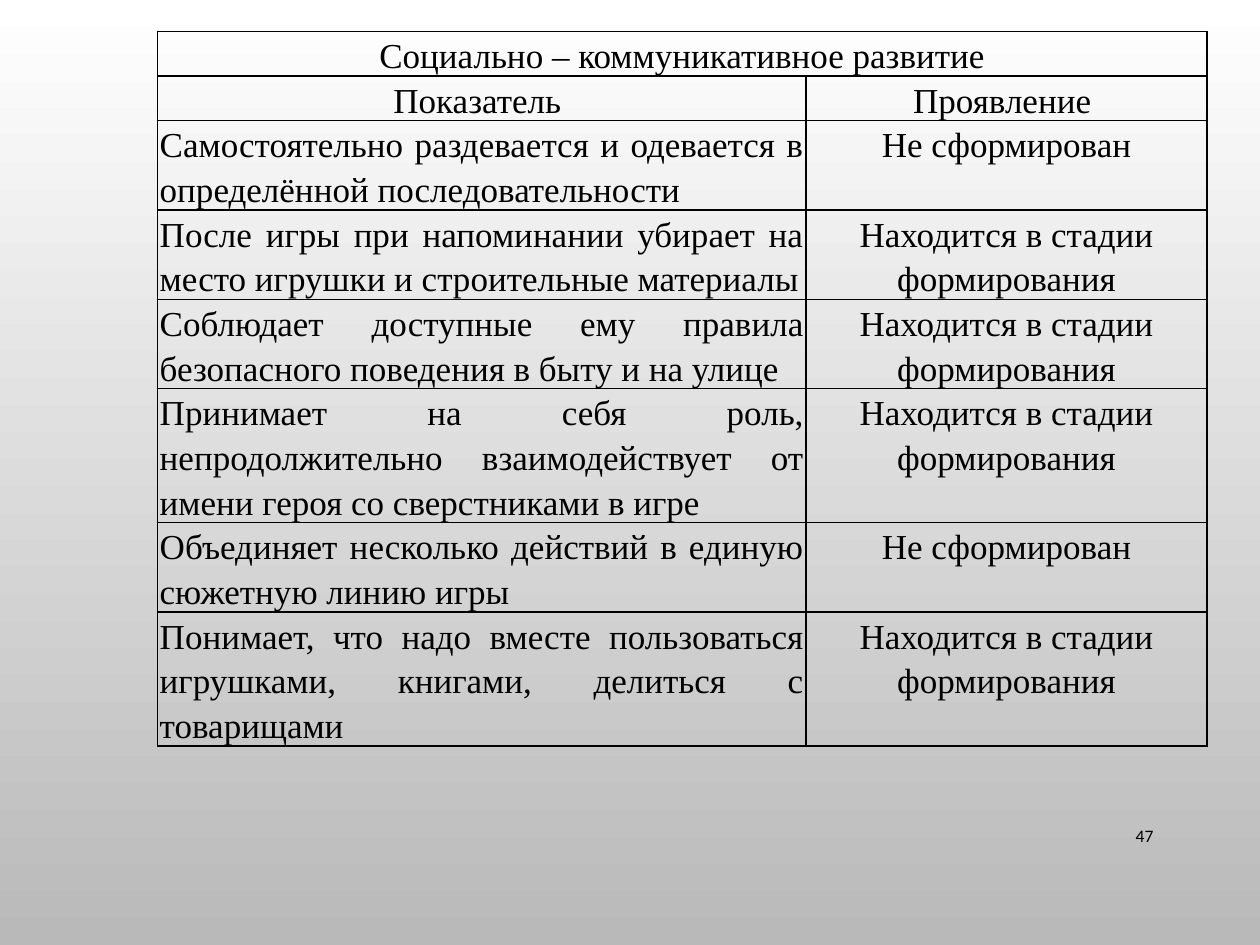
from lxml import etree
from pptx import Presentation
from pptx.dml.color import RGBColor
from pptx.enum.text import MSO_ANCHOR, PP_ALIGN
from pptx.oxml.ns import qn
from pptx.util import Cm, Pt

CENTER, JUSTIFY, RIGHT = PP_ALIGN.CENTER, PP_ALIGN.JUSTIFY, PP_ALIGN.RIGHT
MIDDLE = MSO_ANCHOR.MIDDLE
BLANK_LAYOUT = 6
LINE_HEIGHT = 0.9  # one line of table text, in cm

COLORS = {"text": "000000", "border": "000000", "top": "FFFFFF", "bottom": "B9B9B9"}

HEADING = "Социально – коммуникативное развитие"
COLUMN_NAMES = ("Показатель ", "Проявление ")
ABSENT = "Не сформирован"
FORMING = "Находится в стадии формирования"
# Indicator, its state, number of text lines
INDICATORS = [
    ("Самостоятельно раздевается и одевается в определённой последовательности", ABSENT, 2),
    ("После игры при напоминании убирает на место игрушки и строительные материалы", FORMING, 2),
    ("Соблюдает доступные ему правила безопасного поведения в быту и на улице", FORMING, 2),
    ("Принимает на себя роль, непродолжительно взаимодействует от имени героя "
     "со сверстниками в игре", FORMING, 3),
    ("Объединяет несколько действий в единую сюжетную линию игры", ABSENT, 2),
    ("Понимает, что надо вместе пользоваться игрушками, книгами, делиться "
     "с товарищами", FORMING, 3),
]


class SlideBuilder:
    """Holds the style and the current slide."""

    table_font, table_size = "Times New Roman", 20
    number_font, number_size = "Calibri", 10

    def __init__(self, slide):
        self.slide = slide

    def color(self, name):
        return RGBColor.from_string(COLORS[name])

    def background(self):
        fill = self.slide.background.fill
        fill.gradient()
        fill.gradient_angle = 270  # counter-clockwise: top to bottom
        for stop, name, position in zip(fill.gradient_stops, ("top", "bottom"), (0, 1)):
            stop.color.rgb = self.color(name)
            stop.position = position

    def paragraph(self, para, text, align, font, size):
        para.text = text
        para.alignment = align
        para.font.name = font
        para.font.size = Pt(size)
        para.font.color.rgb = self.color("text")

    def borders(self, cell):
        properties = cell._tc.get_or_add_tcPr()
        for side in ("lnL", "lnR", "lnT", "lnB"):
            line = etree.SubElement(properties, qn(f"a:{side}"), w=str(Pt(1)))
            solid = etree.SubElement(line, qn("a:solidFill"))
            etree.SubElement(solid, qn("a:srgbClr"), val=COLORS["border"])

    def cell(self, cell, text, align):
        cell.margin_left = cell.margin_right = Cm(0.05)
        cell.margin_top = cell.margin_bottom = 0
        self.borders(cell)
        cell.fill.background()
        if text:
            para = cell.text_frame.paragraphs[0]
            self.paragraph(para, text, align, self.table_font, self.table_size)
            para.line_spacing = 1.15

    def table(self, left, top, widths, rows, line_counts):
        frame = self.slide.shapes.add_table(
            len(rows), len(widths), Cm(left), Cm(top),
            Cm(sum(widths)), Cm(LINE_HEIGHT * sum(line_counts)))
        table = frame.table
        table.first_row = table.horz_banding = False
        for column, width in zip(table.columns, widths):
            column.width = Cm(width)
        for row, lines in zip(table.rows, line_counts):
            row.height = Cm(LINE_HEIGHT * lines)
        for r, texts in enumerate(rows):
            for c, text in enumerate(texts):
                is_indicator = r > 1 and c == 0
                self.cell(table.cell(r, c), text, JUSTIFY if is_indicator else CENTER)
        table.cell(0, 0).merge(table.cell(0, len(widths) - 1))

    def page_number(self, left, top, width, height, number):
        box = self.slide.shapes.add_textbox(Cm(left), Cm(top), Cm(width), Cm(height))
        box.text_frame.word_wrap = True
        box.text_frame.vertical_anchor = MIDDLE
        self.paragraph(box.text_frame.paragraphs[0], number, RIGHT,
                       self.number_font, self.number_size)


def main():
    deck = Presentation()
    deck.slide_width, deck.slide_height = Cm(25.4), Cm(19.05)
    builder = SlideBuilder(deck.slides.add_slide(deck.slide_layouts[BLANK_LAYOUT]))
    builder.background()

    # Table of indicators
    rows = [(HEADING, ""), COLUMN_NAMES]
    rows += [(indicator, state) for indicator, state, _ in INDICATORS]
    line_counts = [1, 1] + [lines for _, _, lines in INDICATORS]
    builder.table(3.17, 0.63, (13.08, 8.08), rows, line_counts)

    # Page number
    builder.page_number(21.9, 16.33, 1.6, 1.02, "47")
    deck.save("out.pptx")


if __name__ == "__main__":
    main()
